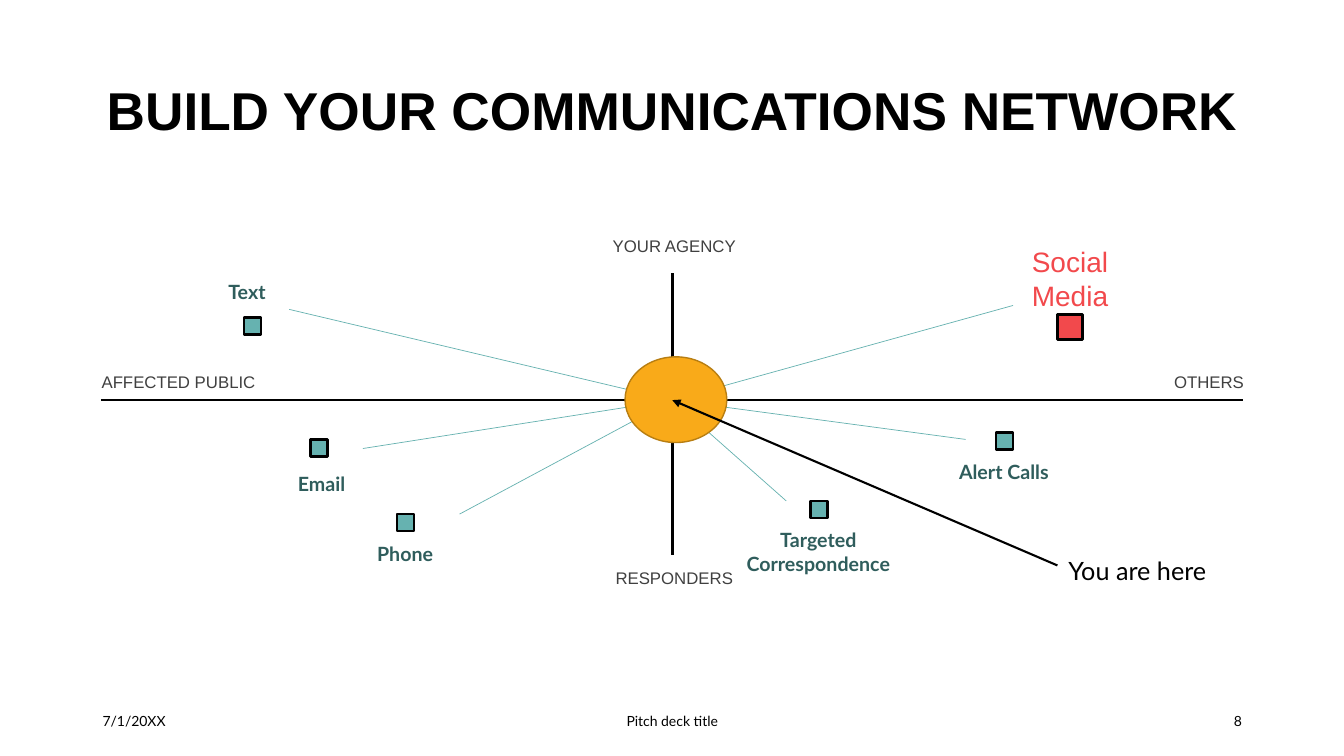
from lxml.etree import SubElement
from pptx import Presentation
from pptx.dml.color import RGBColor
from pptx.enum.shapes import MSO_CONNECTOR, MSO_SHAPE
from pptx.enum.text import MSO_ANCHOR, PP_ALIGN
from pptx.oxml.ns import qn
from pptx.util import Pt

BLACK = RGBColor(0x00, 0x00, 0x00)
GRAY = RGBColor(0x40, 0x40, 0x40)
TEAL = RGBColor(0x66, 0xB2, 0xB0)
DARK = RGBColor(0x2F, 0x5D, 0x5C)
RED = RGBColor(0xF2, 0x49, 0x4C)
GOLD = RGBColor(0xF9, 0xAA, 0x19)
BROWN = RGBColor(0xB8, 0x7E, 0x12)
LEFT, MID, RIGHT = PP_ALIGN.LEFT, PP_ALIGN.CENTER, PP_ALIGN.RIGHT

TITLE = "BUILD YOUR COMMUNICATIONS NETWORK"
HUB = (480.2, 285.8)
AXES = [((72, 285.8), (888, 285.8)), ((480.2, 195.1), (480.2, 396.7))]

# text, left, top, alignment
ENDS = [
    ("YOUR AGENCY", 402.5, 166.3, MID),
    ("AFFECTED PUBLIC", 65.5, 263.5, LEFT),
    ("OTHERS", 737.3, 263.5, RIGHT),
    ("RESPONDERS", 402.5, 403.9, MID),
]
# text, label centre and top, label height, marker centre, spoke end
NODES = [
    ("Text", (176.4, 196.6), 24.5, (180.4, 232.9), (206.6, 221)),
    ("Email", (229.7, 333.4), 24.5, (227.9, 320), (259.2, 320.4)),
    ("Phone", (289.4, 383.8), 24.5, (289.8, 373.3), (328.3, 367.2)),
    ("Targeted Correspondence", (584.6, 373.7), 41, (585, 363.9),
     (561.6, 357.8)),
    ("Alert Calls", (717.1, 324.7), 24.5, (717.5, 315), (689.8, 313.9)),
]
SOCIAL = ("Social Media", (764.3, 171.4), 55.4, (764.3, 233.6), (723.6, 218.2))
# text, left, width, alignment
FOOTER = [
    ("7/1/20XX", 66.2, 216, LEFT),
    ("Pitch deck title", 318.2, 324, MID),
    ("8", 678.2, 216, RIGHT),
]

deck = Presentation()
deck.slide_width, deck.slide_height = Pt(960), Pt(540)
slide = deck.slides.add_slide(deck.slide_layouts[6])
shapes = slide.shapes


def write(text, box, size, color, face="Lato", align=MID, bold=False,
          anchor=MSO_ANCHOR.TOP):
    """Add a wrapped one-paragraph text box and return its paragraph."""
    frame = shapes.add_textbox(*map(Pt, box)).text_frame
    frame.word_wrap = True
    frame.vertical_anchor = anchor
    para = frame.paragraphs[0]
    para.text, para.alignment = text, align
    font = para.font
    font.name, font.size, font.bold = face, Pt(size), bold
    font.color.rgb = color
    return para


def draw(kind, center, width, height, fill, edge, weight):
    """Add a filled shape around its centre."""
    x, y = center
    shape = shapes.add_shape(kind, Pt(x - width / 2), Pt(y - height / 2),
                             Pt(width), Pt(height))
    shape.shadow.inherit = False
    shape.fill.solid()
    shape.fill.fore_color.rgb = fill
    shape.line.color.rgb = edge
    shape.line.width = Pt(weight)


def link(start, end, color, weight, arrow=False):
    line = shapes.add_connector(MSO_CONNECTOR.STRAIGHT,
                                *map(Pt, start + end))
    line.line.color.rgb = color
    line.line.width = Pt(weight)
    if arrow:
        SubElement(line.line._get_or_add_ln(), qn("a:tailEnd"), type="triangle")
    SubElement(line._element.spPr, qn("a:effectLst"))


def mark(node, side, width, fill, **style):
    """Add a channel: its label, its square and its spoke to the hub."""
    text, (x, top), height, center, end = node
    write(text, (x - width / 2, top, width, height), **style)
    draw(MSO_SHAPE.RECTANGLE, center, side, side, fill, BLACK, 1.75)
    link(HUB, end, TEAL, 0.5)


for start, end in AXES:
    link(start, end, BLACK, 1.78)

head = write(TITLE, (66.2, 28.8, 828, 104.4), 38, BLACK, "Arial",
             bold=True, anchor=MSO_ANCHOR.MIDDLE)
head.line_spacing = 0.9

for text, left, top, align in ENDS:
    para = write(text, (left, top, 158.4, 21.6), 12, GRAY, "Arial", align)
    para.line_spacing, para.space_before = 0.9, Pt(10)

for node in NODES:
    mark(node, 12.2, 165.6, TEAL, size=14, color=DARK, bold=True)
mark(SOCIAL, 18, 118.8, RED, size=20, color=RED, face="Arial")

for text, left, width, align in FOOTER:
    write(text, (left, 500.4, width, 28.8), 10, BLACK, align=align,
          anchor=MSO_ANCHOR.MIDDLE)

draw(MSO_SHAPE.OVAL, (482.8, 285.5), 72.7, 61.2, GOLD, BROWN, 1)
link((755.3, 403.9), HUB, BLACK, 1.5, arrow=True)
write("You are here", (756, 393.1, 138.2, 28.8), 18, BLACK, align=LEFT)

deck.save("out.pptx")
